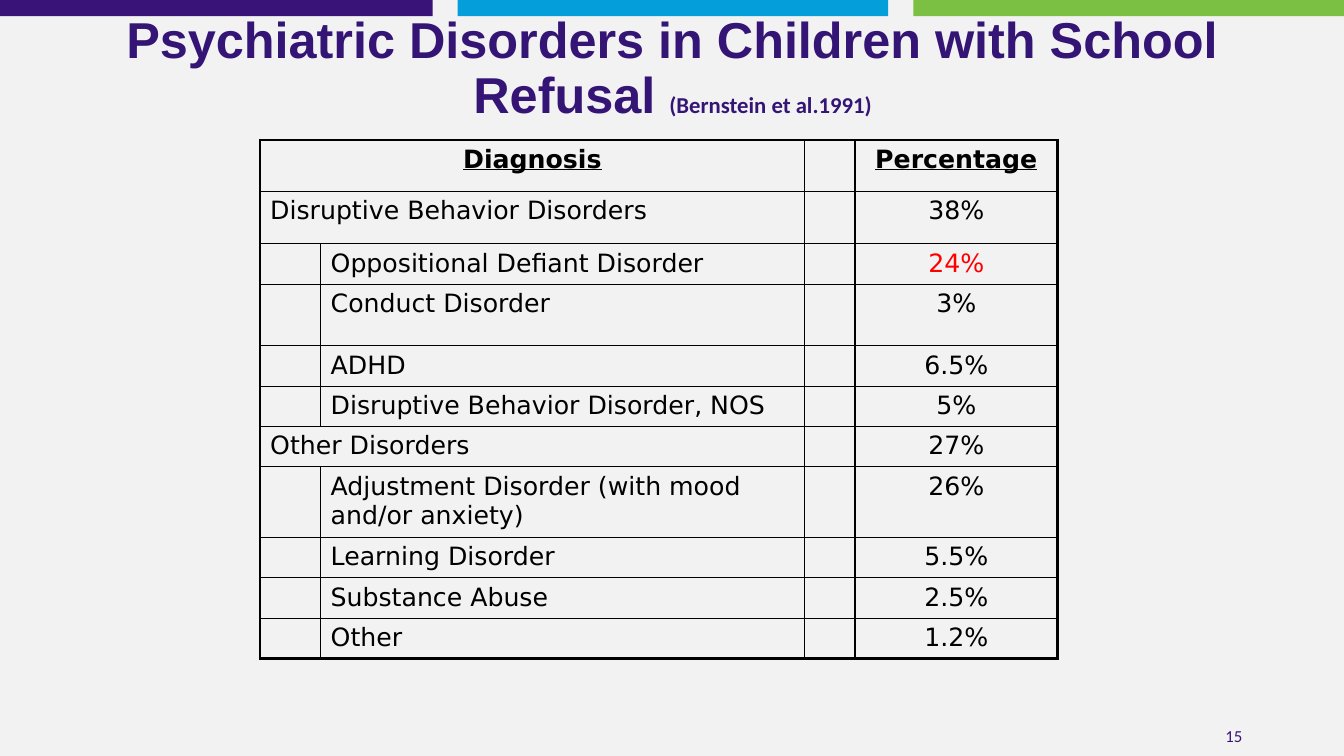
from lxml import etree
from pptx import Presentation
from pptx.dml.color import RGBColor
from pptx.enum.shapes import MSO_SHAPE
from pptx.enum.text import MSO_ANCHOR, PP_ALIGN
from pptx.oxml.ns import qn
from pptx.util import Inches, Pt

RECTANGLE = MSO_SHAPE.RECTANGLE
MIDDLE = MSO_ANCHOR.MIDDLE
LEFT, CENTER, RIGHT = PP_ALIGN.LEFT, PP_ALIGN.CENTER, PP_ALIGN.RIGHT

PALE_GRAY = RGBColor(0xF2, 0xF2, 0xF2)
PURPLE = RGBColor(0x39, 0x13, 0x78)
TITLE_PURPLE = RGBColor(0x34, 0x15, 0x75)
BLUE = RGBColor(0x04, 0x9F, 0xDA)
GREEN = RGBColor(0x7B, 0xBF, 0x43)
BLACK = RGBColor(0, 0, 0)
RED = RGBColor(0xFF, 0, 0)

THIN, THICK = Pt(1), Pt(2.25)
BARS = [(0, 4.29, PURPLE), (4.54, 4.27, BLUE), (9.06, 4.27, GREEN)]
COLUMN_WIDTHS = [0.6, 4.8, 0.5, 2.01]

# Group name (or None for an indented disorder), disorder, percentage, row height
ROWS = [
    ("Diagnosis", None, "Percentage", 0.51),
    ("Disruptive Behavior Disorders", None, "38%", 0.52),
    (None, "Oppositional Defiant Disorder", "24%", 0.4),
    (None, "Conduct Disorder", "3%", 0.61),
    (None, "ADHD", "6.5%", 0.4),
    (None, "Disruptive Behavior Disorder, NOS", "5%", 0.4),
    ("Other Disorders", None, "27%", 0.4),
    (None, "Adjustment Disorder (with mood and/or anxiety)", "26%", 0.7),
    (None, "Learning Disorder", "5.5%", 0.4),
    (None, "Substance Abuse", "2.5%", 0.4),
    (None, "Other", "1.2%", 0.4),
]
HIGHLIGHT = "24%"


def style_font(font, name, size, color, bold=False):
    font.name = name
    font.size = Pt(size)
    font.color.rgb = color
    font.bold = bold


def add_bar(s, left, width, color):
    bar = s.shapes.add_shape(RECTANGLE, Inches(left), 0, Inches(width), Inches(0.16))
    bar.shadow.inherit = False
    bar.fill.solid()
    bar.fill.fore_color.rgb = color
    bar.line.fill.background()


def add_text(s, left, top, width, height, align, runs):
    """Add a centred-height text box; runs are (text, font, size, color, bold)."""
    box = s.shapes.add_textbox(Inches(left), Inches(top), Inches(width), Inches(height))
    tf = box.text_frame
    tf.word_wrap = True
    tf.vertical_anchor = MIDDLE
    p = tf.paragraphs[0]
    p.alignment = align
    for text, *style in runs:
        r = p.add_run()
        r.text = text
        style_font(r.font, *style)
    return p


def set_borders(cell, widths):
    """Draw black borders; widths are in the order left, right, top, bottom."""
    tc_pr = cell._tc.get_or_add_tcPr()
    for side, width in zip("LRTB", widths):
        line = etree.SubElement(tc_pr, qn(f"a:ln{side}"), w=str(width))
        fill = etree.SubElement(line, qn("a:solidFill"))
        etree.SubElement(fill, qn("a:srgbClr"), val=str(BLACK))


def fill_cell(cell, text, align, color, heading):
    cell.text_frame.text = text
    p = cell.text_frame.paragraphs[0]
    p.alignment = align
    for r in p.runs:
        style_font(r.font, "DejaVu Sans", 18, color, heading)
        r.font.underline = heading


def add_diagnosis_table(s):
    height = sum(row[-1] for row in ROWS)
    last_row, last_col = len(ROWS) - 1, len(COLUMN_WIDTHS) - 1
    table = s.shapes.add_table(
        len(ROWS), len(COLUMN_WIDTHS), Inches(2.58), Inches(1.39),
        Inches(sum(COLUMN_WIDTHS)), Inches(height)).table
    table.first_row = table.horz_banding = False
    for column, width in zip(table.columns, COLUMN_WIDTHS):
        column.width = Inches(width)

    for i, (group, disorder, percentage, row_height) in enumerate(ROWS):
        table.rows[i].height = Inches(row_height)
        for j in range(len(COLUMN_WIDTHS)):
            cell = table.cell(i, j)
            outer = (j == 0, j == last_col, i == 0, i == last_row)
            set_borders(cell, [THICK if edge else THIN for edge in outer])
            cell.fill.background()
        heading = i == 0
        if group:
            table.cell(i, 0).merge(table.cell(i, 1))
            fill_cell(table.cell(i, 0), group, CENTER if heading else LEFT, BLACK, heading)
        else:
            fill_cell(table.cell(i, 1), disorder, LEFT, BLACK, heading)
        color = RED if percentage == HIGHLIGHT else BLACK
        fill_cell(table.cell(i, last_col), percentage, CENTER, color, heading)


def main():
    prs = Presentation()
    prs.slide_width, prs.slide_height = Inches(13.33), Inches(7.5)
    s = prs.slides.add_slide(prs.slide_layouts[6])
    s.background.fill.solid()
    s.background.fill.fore_color.rgb = PALE_GRAY

    for bar in BARS:
        add_bar(s, *bar)
    add_text(s, 9.42, 7.1, 3, 0.4, RIGHT, [("15", "Calibri", 12, PURPLE)])
    title = add_text(s, 0.46, 0.3, 12.42, 0.78, CENTER, [
        ("Psychiatric Disorders in Children with School Refusal ",
         "Arial", 36, TITLE_PURPLE, True),
        ("(Bernstein et al.1991)", "Calibri", 16.2, TITLE_PURPLE, True),
    ])
    title.line_spacing = 0.9
    add_diagnosis_table(s)
    prs.save("out.pptx")


if __name__ == "__main__":
    main()
